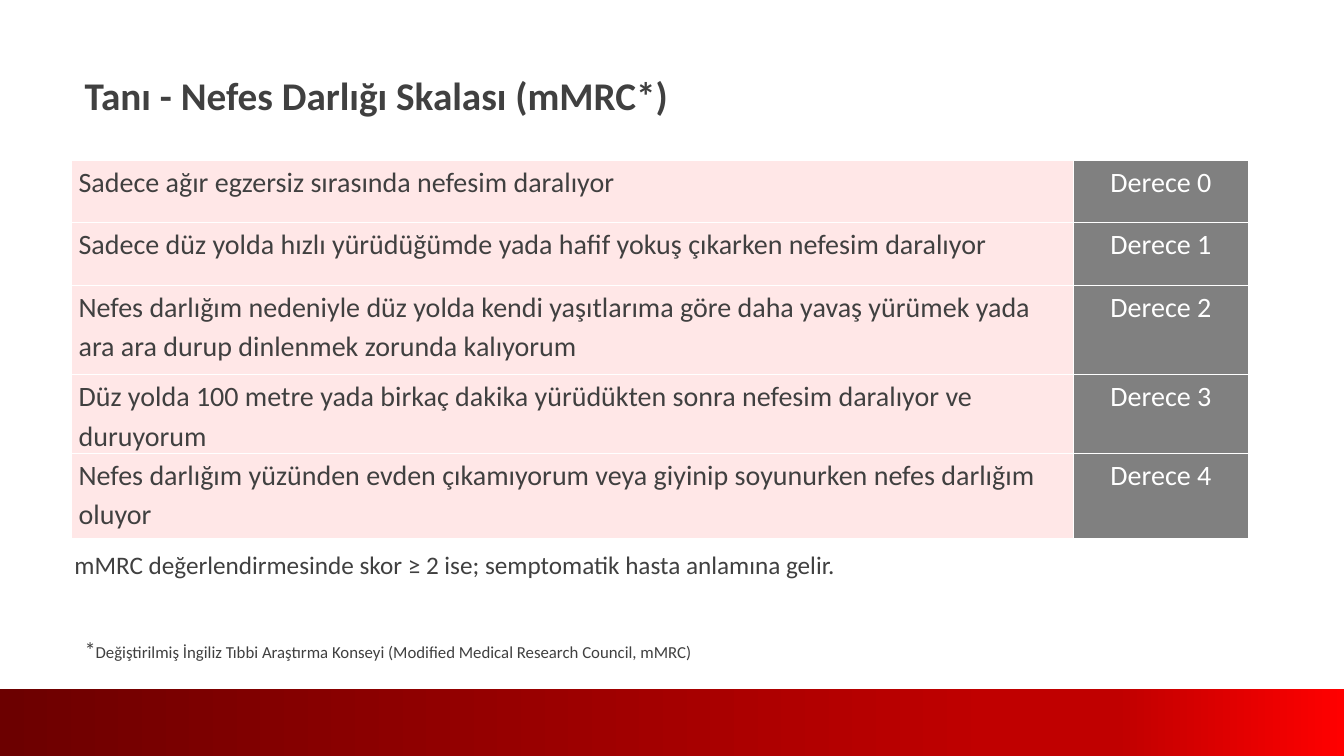
from lxml import etree
from pptx import Presentation
from pptx import util as u
from pptx.dml import color
from pptx.enum import shapes, text
from pptx.oxml import ns, parse_xml

INK, PINK, GREY, WHITE = "404040", "FFE7E7", "808080", "FFFFFF"
BANNER_STOPS = [(0, "6C0000"), (74, "C00000"), (83, "C00000"), (100, "FF0000")]
SCALE = [
    (0.62, "Sadece ağır egzersiz sırasında nefesim daralıyor"),
    (0.62, "Sadece düz yolda hızlı yürüdüğümde yada hafif yokuş çıkarken nefesim daralıyor"),
    (0.89, "Nefes darlığım nedeniyle düz yolda kendi yaşıtlarıma göre daha yavaş yürümek yada "
           "ara ara durup dinlenmek zorunda kalıyorum"),
    (0.76, "Düz yolda 100 metre yada birkaç dakika yürüdükten sonra nefesim daralıyor ve duruyorum"),
    (0.84, "Nefes darlığım yüzünden evden çıkamıyorum veya giyinip soyunurken nefes darlığım oluyor"),
]
COLUMNS = [9.94, 1.73]


def rgb(value):
    return color.RGBColor.from_string(value)


def write(paragraph, words, size, ink=INK, bold=False):
    """Add one formatted run to the paragraph."""
    run = paragraph.add_run()
    run.text = words
    for name, value in {"name": "Calibri", "size": u.Pt(size), "bold": bold}.items():
        setattr(run.font, name, value)
    run.font.color.rgb = rgb(ink)


deck = Presentation()
deck.slide_width, deck.slide_height = u.Inches(13.33), u.Inches(7.5)
slide = deck.slides.add_slide(deck.slide_layouts[5])

# Title
title = slide.shapes.title
for side, length in {"left": 0.74, "top": 0.66, "width": 10, "height": 1.04}.items():
    setattr(title, side, u.Inches(length))
title.text_frame.vertical_anchor = text.MSO_ANCHOR.TOP
heading = title.text_frame.paragraphs[0]
heading.alignment = text.PP_ALIGN.LEFT
write(heading, "Tanı - Nefes Darlığı Skalası (mMRC*)", 28, bold=True)

# Scale: one row per grade
scale = slide.shapes.add_table(
    len(SCALE), len(COLUMNS), u.Inches(0.71), u.Inches(1.59),
    u.Inches(sum(COLUMNS)), u.Inches(sum(height for height, _ in SCALE))).table
for column, width in zip(scale.columns, COLUMNS):
    column.width = u.Inches(width)
for grade, (height, complaint) in enumerate(SCALE):
    scale.rows[grade].height = u.Inches(height)
    looks = [(complaint, PINK, INK, text.PP_ALIGN.LEFT),
             (f"Derece {grade}", GREY, WHITE, text.PP_ALIGN.CENTER)]
    for cell, (words, fill, ink, alignment) in zip(scale.rows[grade].cells, looks):
        for name, inset in {"left": 0.07, "right": 0.07, "top": 0, "bottom": 0}.items():
            setattr(cell, f"margin_{name}", u.Inches(inset))
        for edge in ("lnL", "lnR", "lnT", "lnB"):
            cell._tc.get_or_add_tcPr().append(parse_xml(
                f'<a:{edge} {ns.nsdecls("a")} w="12700"><a:solidFill>'
                f'<a:srgbClr val="{WHITE}"/></a:solidFill></a:{edge}>'))
        cell.fill.solid()
        cell.fill.fore_color.rgb = rgb(fill)
        line = cell.text_frame.paragraphs[0]
        for name, value in {"alignment": alignment, "line_spacing": 1.15,
                            "space_after": u.Pt(10)}.items():
            setattr(line, name, value)
        write(line, words, 20, ink)

# Footnote and reading of the score
footnote = slide.shapes.add_textbox(*map(u.Inches, (0.44, 6.26, 6.63, 0.37))).text_frame
footnote.word_wrap = False
footnote.auto_size = text.MSO_AUTO_SIZE.SHAPE_TO_FIT_TEXT
footnote.vertical_anchor = text.MSO_ANCHOR.MIDDLE
note = footnote.paragraphs[0]
indents = note._p.get_or_add_pPr()
indents.set("marL", "0")
indents.set("indent", str(u.Inches(0.3)))
write(note, "*", 16)
write(note, "Değiştirilmiş İngiliz Tıbbi Araştırma Konseyi (Modified Medical Research Council, mMRC)", 12)

reading = slide.shapes.add_textbox(*map(u.Inches, (0.64, 5.4, 11.27, 0.4))).text_frame
reading.word_wrap = True
reading.auto_size = text.MSO_AUTO_SIZE.SHAPE_TO_FIT_TEXT
write(reading.paragraphs[0],
      "mMRC değerlendirmesinde skor ≥ 2 ise; semptomatik hasta anlamına gelir.", 18)

# Bottom banner
banner_top = u.Inches(6.84)
banner = slide.shapes.add_shape(shapes.MSO_SHAPE.RECTANGLE, 0, banner_top,
                                deck.slide_width, deck.slide_height - banner_top)
banner.shadow.inherit = False
banner.line.fill.background()
banner.fill.gradient()
banner.fill.gradient_angle = 0
stops = banner._element.spPr.find(ns.qn("a:gradFill")).find(ns.qn("a:gsLst"))
for stop in list(stops):
    stops.remove(stop)
for share, shade in BANNER_STOPS:
    stop = etree.SubElement(stops, ns.qn("a:gs"), pos=str(share * 1000))
    etree.SubElement(stop, ns.qn("a:srgbClr"), val=shade)

deck.save("out.pptx")
